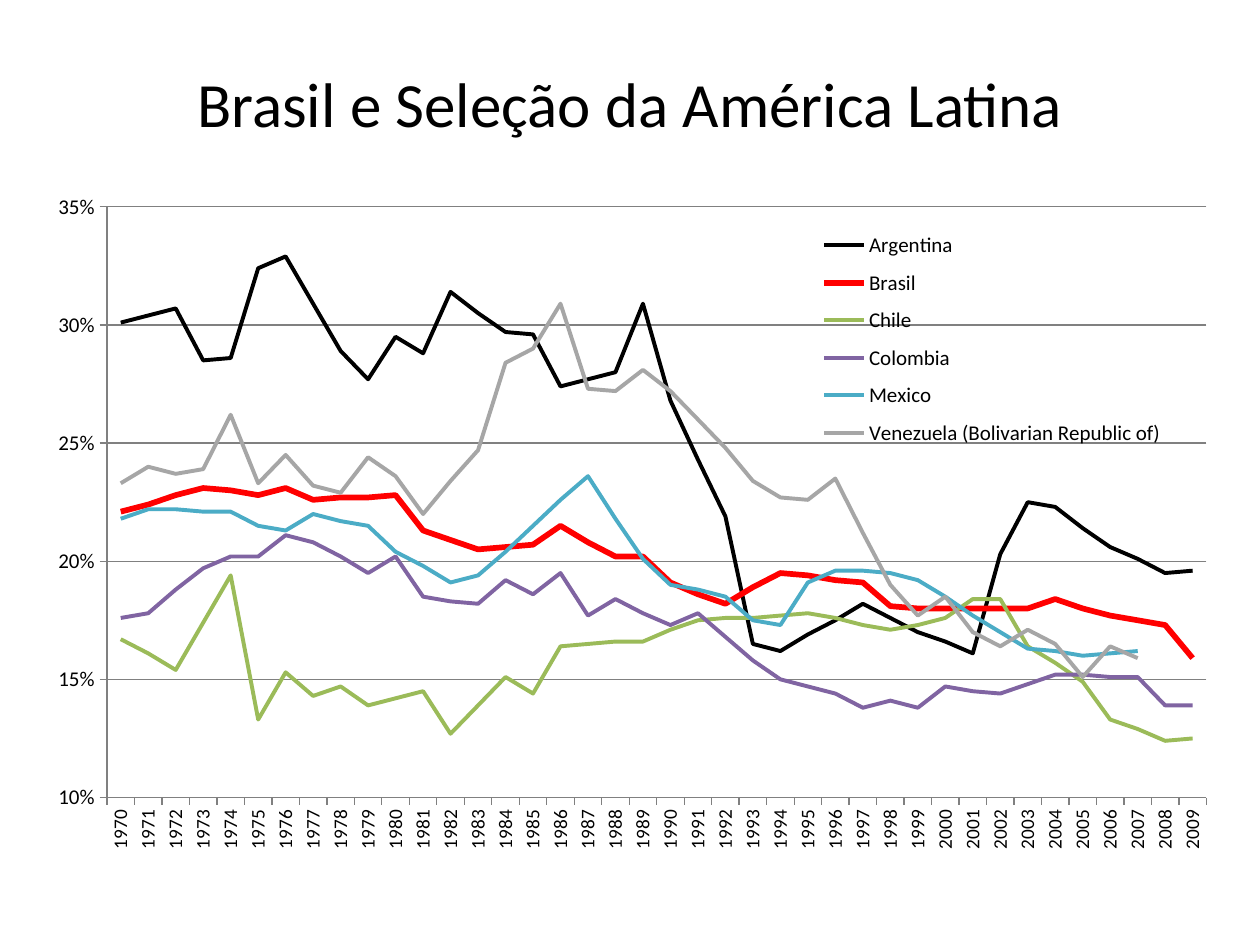
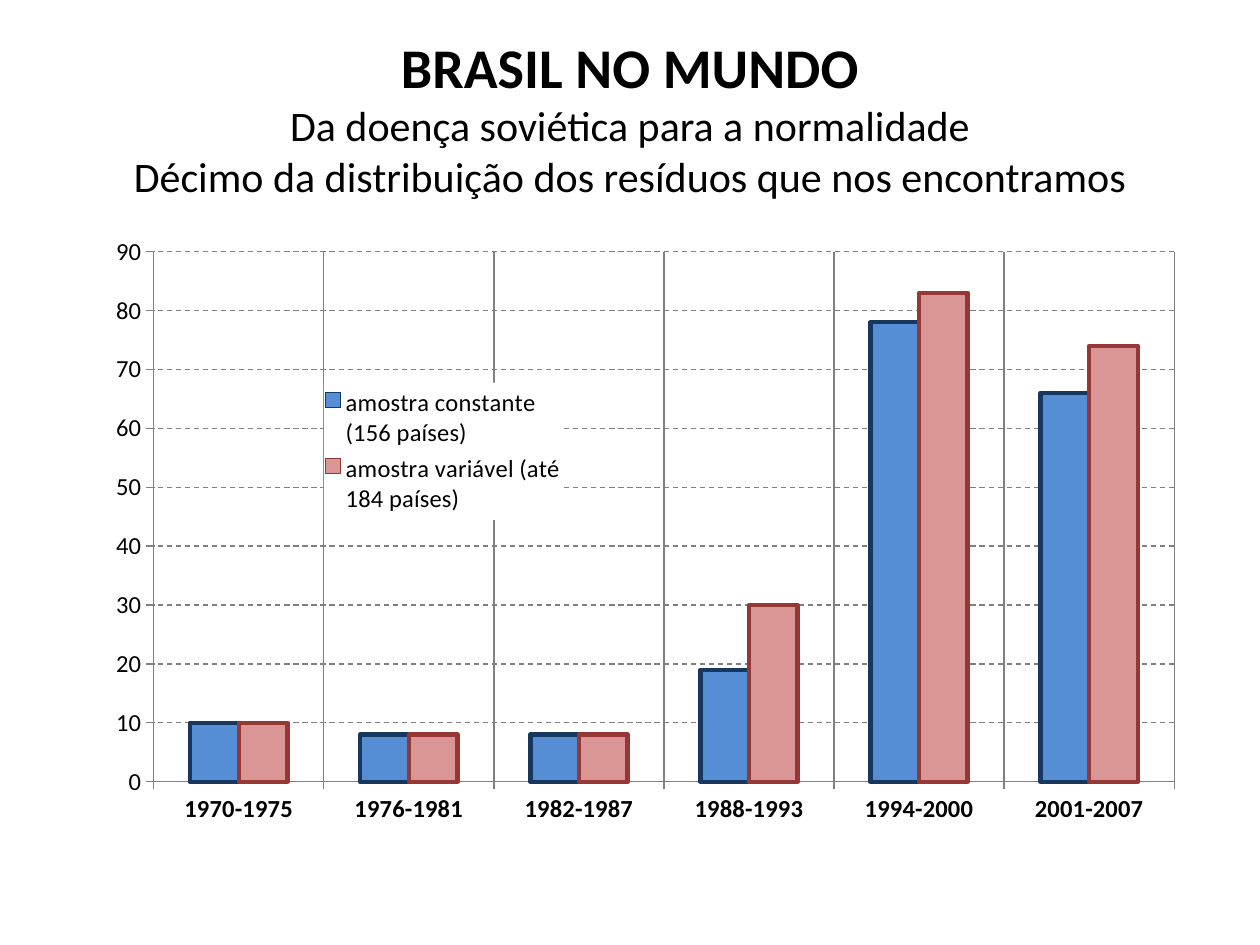
from lxml import etree
from pptx import Presentation
from pptx.chart.data import CategoryChartData
from pptx.dml.color import RGBColor
from pptx.enum.chart import XL_CHART_TYPE, XL_LEGEND_POSITION, XL_TICK_MARK
from pptx.enum.dml import MSO_LINE
from pptx.enum.text import MSO_ANCHOR, MSO_AUTO_SIZE, PP_ALIGN
from pptx.oxml import parse_xml
from pptx.oxml.ns import nsdecls, qn
from pptx.util import Inches, Pt

LINE, COLUMN = XL_CHART_TYPE.LINE, XL_CHART_TYPE.COLUMN_CLUSTERED
RIGHT = XL_LEGEND_POSITION.RIGHT
OUTSIDE, NO_TICK = XL_TICK_MARK.OUTSIDE, XL_TICK_MARK.NONE
DASH = MSO_LINE.DASH
MIDDLE, CENTER, NO_FIT = MSO_ANCHOR.MIDDLE, PP_ALIGN.CENTER, MSO_AUTO_SIZE.NONE

FONT = "Calibri"
BLACK, GRAY, RED, GREEN, PURPLE, TEAL, SILVER, BLUE, NAVY, PINK, MAROON = map(
    RGBColor.from_string,
    ("000000", "808080", "FF0000", "9BBB59", "8064A2", "4BACC6",
     "A6A6A6", "558ED5", "17375E", "D99694", "953735"))

THIN, THICK = 2.25, 3.25
G = None
YEARS = [str(year) for year in range(1970, 2010)]
COUNTRIES_PER_MILLE = [
    ("Argentina", BLACK, THIN, [
        301, G, 307, 285, 286, 324, 329, G, 289, 277,
        295, 288, 314, G, 297, 296, 274, G, 280, 309,
        268, G, 219, 165, 162, G, G, 182, G, 170,
        G, 161, 203, 225, 223, G, 206, G, 195, 196]),
    ("Brasil", RED, THICK, [
        221, G, G, 231, G, 228, 231, 226, G, G,
        228, 213, G, 205, G, 207, 215, G, 202, 202,
        191, G, 182, G, 195, G, 192, 191, 181, G,
        180, G, G, 180, 184, G, 177, G, 173, 159]),
    ("Chile", GREEN, THIN, [
        167, G, 154, G, 194, 133, 153, 143, 147, 139,
        G, 145, 127, G, 151, 144, 164, G, 166, 166,
        G, 175, G, G, G, 178, G, G, 171, G,
        176, 184, 184, 164, G, 149, 133, G, 124, 125]),
    ("Colombia", PURPLE, THIN, [
        176, 178, G, 197, 202, 202, 211, 208, G, 195,
        202, 185, G, 182, 192, 186, 195, 177, 184, G,
        173, 178, G, 158, 150, G, 144, 138, 141, 138,
        147, G, 144, G, 152, G, G, 151, 139, 139]),
    ("Mexico", TEAL, THIN, [
        218, 222, G, G, 221, 215, 213, 220, G, 215,
        204, G, 191, 194, G, G, G, 236, G, 201,
        190, G, 185, 175, 173, 191, 196, G, 195, 192,
        G, G, G, 163, G, 160, G, 162]),
    ("Venezuela (Bolivarian Republic of)", SILVER, THIN, [
        233, 240, 237, 239, 262, 233, 245, 232, 229, 244,
        236, 220, G, 247, 284, 290, 309, 273, 272, 281,
        272, G, 248, 234, 227, 226, 235, G, 190, 177,
        185, 170, 164, 171, 165, 151, 164, 159]),
]
PERIODS = ["1970-1975", "1976-1981", "1982-1987", "1988-1993", "1994-2000", "2001-2007"]
SAMPLES = [
    ("amostra constante (156 países)", BLUE, NAVY, [10, 8, 8, 19, 78, 66]),
    ("amostra variável (até 184 países)", PINK, MAROON, [10, 8, 8, 30, 83, 74]),
]


def interpolate(per_mille):
    known = [i for i, value in enumerate(per_mille) if value is not G]
    filled = [per_mille[0] / 1000]
    for start, end in zip(known, known[1:]):
        step = (per_mille[end] - per_mille[start]) / (end - start)
        filled += [round((per_mille[start] + step * k) / 1000, 3)
                   for k in range(1, end - start + 1)]
    return filled + [None] * (len(YEARS) - len(filled))


def set_attrs(obj, **values):
    for name, value in values.items():
        setattr(obj, name, value)


def set_font(font, size, bold=False):
    set_attrs(font, name=FONT, size=Pt(size), bold=bold)
    font.color.rgb = BLACK


def set_line(line, color, width, dash=None):
    line.color.rgb = color
    line.width = Pt(width)
    if dash:
        line.dash_style = dash


def add_title(s, height, lines):
    title = s.shapes.title
    set_attrs(title, left=Inches(0.5), top=Inches(0.3),
              width=Inches(9), height=Inches(height))
    tf = title.text_frame
    set_attrs(tf, vertical_anchor=MIDDLE, auto_size=NO_FIT, word_wrap=True)
    p = tf.paragraphs[0]
    p.alignment = CENTER
    for i, (text, size, bold) in enumerate(lines):
        if i:
            p.add_line_break()
            etree.SubElement(p._p[-1], qn("a:rPr"), sz=str(size * 100))
        r = p.add_run()
        r.text = text
        set_font(r.font, size, bold)


def set_layout(parent, index, box, inner=False):
    for old in parent.findall(qn("c:layout")):
        parent.remove(old)
    target = '<c:layoutTarget val="inner"/>' if inner else ""
    modes = "".join(f'<c:{edge}Mode val="edge"/>' for edge in "xy")
    sizes = "".join(f'<c:{key} val="{value}"/>' for key, value in zip("xywh", box))
    parent.insert(index, parse_xml(
        f'<c:layout {nsdecls("c")}><c:manualLayout>{target}{modes}{sizes}'
        "</c:manualLayout></c:layout>"))


def add_chart(s, kind, box, cats, series, number_format, plot_box, legend_box, legend_size):
    data = CategoryChartData(number_format=number_format)
    data.categories = cats
    for name, *_, values in series:
        data.add_series(name, values)
    chart = s.shapes.add_chart(kind, *map(Inches, box), data).chart
    set_font(chart.font, 10)
    set_attrs(chart, has_title=False, has_legend=True)
    chart.plots[0].vary_by_categories = False
    set_attrs(chart.legend, position=RIGHT, include_in_layout=False)
    set_font(chart.legend.font, legend_size)
    set_layout(chart.plots[0]._element.getparent(), 0, plot_box, inner=True)
    set_layout(chart.legend._element, 1, legend_box)
    return chart


def format_axis(axis, size, bold=False, grid_dash=None, **values):
    set_attrs(axis, major_tick_mark=OUTSIDE, minor_tick_mark=NO_TICK, **values)
    set_font(axis.tick_labels.font, size, bold)
    set_line(axis.format.line, GRAY, 0.75)
    if axis.has_major_gridlines:
        set_line(axis.major_gridlines.format.line, GRAY, 0.75, grid_dash)


def format_values(axis, number_format):
    set_attrs(axis.tick_labels, number_format=number_format, number_format_is_linked=False)


def latin_america_slide(s):
    add_title(s, 1.03, [("Brasil e Seleção da América Latina", 36, False)])
    countries = [(name, color, width, interpolate(values))
                 for name, color, width, values in COUNTRIES_PER_MILLE]
    chart = add_chart(s, LINE, (0.39, 1.48, 9.19, 5.39), YEARS, countries, "0%",
                      (0.05, 0.03, 0.95, 0.87), (0.66, 0.05, 0.31, 0.35), 12)
    format_axis(chart.category_axis, 11, has_major_gridlines=False)
    chart.category_axis._element.find(qn("c:txPr")).find(qn("a:bodyPr")).set("rot", "-5400000")
    format_axis(chart.value_axis, 12, has_major_gridlines=True,
                minimum_scale=0.1, maximum_scale=0.35, major_unit=0.05)
    format_values(chart.value_axis, "0%")
    for line, (_, color, width, _) in zip(chart.plots[0].series, countries):
        line.smooth = False
        set_line(line.format.line, color, width)


def world_slide(s):
    add_title(s, 1.25, [
        ("BRASIL NO MUNDO", 32, True),
        ("Da doença soviética para a normalidade", 24, False),
        ("Décimo da distribuição dos resíduos que nos encontramos", 24, False)])
    chart = add_chart(s, COLUMN, (0.5, 1.75, 9, 4.95), PERIODS, SAMPLES, "0",
                      (0.08, 0.05, 0.9, 0.85), (0.23, 0.26, 0.21, 0.22), 14)
    format_axis(chart.category_axis, 14, True, has_major_gridlines=True)
    format_axis(chart.value_axis, 14, grid_dash=DASH, has_major_gridlines=True,
                minimum_scale=0, maximum_scale=90, major_unit=10)
    format_values(chart.value_axis, "0")
    set_attrs(chart.plots[0], gap_width=150, overlap=0)
    for bars, (_, fill, outline, _) in zip(chart.plots[0].series, SAMPLES):
        bars.format.fill.solid()
        bars.format.fill.fore_color.rgb = fill
        set_line(bars.format.line, outline, 2.5)
    chart.legend._element.find(qn("c:overlay")).addnext(parse_xml(
        f'<c:spPr {nsdecls("c", "a")}><a:solidFill><a:srgbClr val="FFFFFF"/>'
        "</a:solidFill></c:spPr>"))


def main():
    prs = Presentation()
    set_attrs(prs, slide_width=Inches(10), slide_height=Inches(7.5))
    for build in (latin_america_slide, world_slide):
        build(prs.slides.add_slide(prs.slide_layouts[5]))
    prs.save("out.pptx")


if __name__ == "__main__":
    main()
